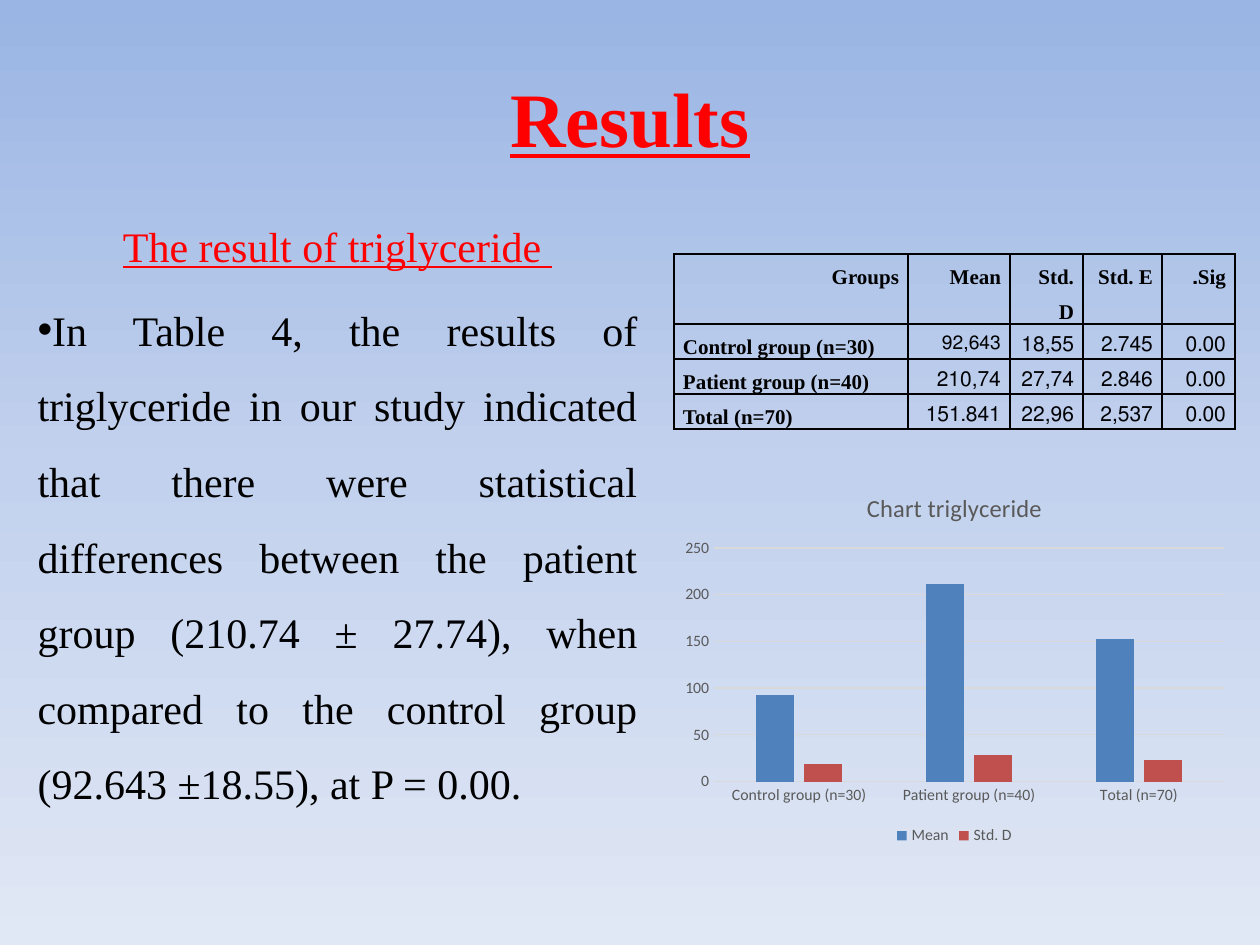
"""Build the triglyceride results slide: text, table and column chart."""
from copy import deepcopy
from dataclasses import dataclass

from lxml.etree import SubElement
from pptx import Presentation
from pptx.chart.data import CategoryChartData
from pptx.dml.color import RGBColor
from pptx.enum.chart import XL_CHART_TYPE, XL_LEGEND_POSITION, XL_TICK_MARK
from pptx.enum.text import MSO_ANCHOR, MSO_AUTO_SIZE, PP_ALIGN
from pptx.oxml import parse_xml
from pptx.oxml.ns import nsdecls, qn
from pptx.util import Emu, Pt

TITLE = "Results"
HEAD = "The result of triglyceride "
BODY = [
    "In Table 4, the results of triglyceride in our study indicated that there "
    "were statistical differences between the patient group (",
    "210.74", " ± ", "27.74",
    "), when compared to the control group (92.643 ±", "18.55",
    "), at P = 0.00.",
]
ROWS = [
    ("Groups", "Mean", "Std. D", "Std. E", "Sig."),
    ("Control group (n=30)", "92,643", "18,55", "2.745", "0.00"),
    ("Patient group (n=40)", "210,74", "27,74", "2.846", "0.00"),
    ("Total (n=70)", "151.841", "22,96", "2,537", "0.00"),
]
COLS = (234, 102, 73, 79, 73)
HIGHS = (70, 35, 35, 35)
CHART = "Chart triglyceride"
SERIES = {"Mean": (93, 211, 152), "Std. D": (19, 28, 23)}
BOX = {
    "title": (63, 38, 1134, 157),
    "body": (25, 214, 625, 665),
    "table": (674, 254, 561, 175),
    "chart": (674, 472, 561, 378),
}


@dataclass(frozen=True)
class Theme:
    serif: str = "Times New Roman"
    sans: str = "Calibri"
    red: str = "FF0000"
    black: str = "000000"
    ink: str = "010205"
    gray: str = "595959"
    rule: str = "D9D9D9"
    bars: tuple = ("4F81BD", "C0504D")
    sky: tuple = ((0, "9AB5E4"), (0.5, "C2D1ED"), (1, "E1E8F5"))
    title: int = 44
    body: int = 24
    cell: int = 12
    small: int = 11
    chart: int = 14
    label: int = 9


LOOK = Theme()


def px(num):
    return Emu(num * 914400 // 126)


def place(shape, name):
    shape.left, shape.top, shape.width, shape.height = map(px, BOX[name])


def style(font, size, color, face):
    font.size, font.name = Pt(size), face
    font.color.rgb = RGBColor.from_string(color)


def write(para, text, size, color=LOOK.black, face=LOOK.serif, bold=False,
          under=False, align=None, rtl=False):
    run = para.add_run()
    run.text = text
    style(run.font, size, color, face)
    run.font.bold, run.font.underline = bold, under
    if align is not None:
        para.alignment = align
    if rtl:
        para._p.get_or_add_pPr().set("rtl", "1")


def paint(slide):
    fill = slide.background.fill
    fill.gradient()
    fill.gradient_angle = 270
    stops = slide._element.find(".//" + qn("a:gsLst"))
    stops.append(deepcopy(stops[0]))
    for stop, (pos, color) in zip(fill.gradient_stops, LOOK.sky):
        stop.color.rgb = RGBColor.from_string(color)
        stop.position = pos


def add_text(slide):
    title, body = slide.shapes.title, slide.placeholders[1]
    place(title, "title")
    title.text_frame.vertical_anchor = MSO_ANCHOR.MIDDLE
    write(title.text_frame.paragraphs[0], TITLE, LOOK.title, color=LOOK.red,
          bold=True, under=True, align=PP_ALIGN.CENTER, rtl=True)
    place(body, "body")
    frame = body.text_frame
    frame.auto_size = MSO_AUTO_SIZE.NONE
    head, para = frame.paragraphs[0], frame.add_paragraph()
    write(head, HEAD, LOOK.body, color=LOOK.red, under=True,
          align=PP_ALIGN.CENTER)
    for step, part in enumerate(BODY):
        write(para, part, LOOK.body, align=PP_ALIGN.JUSTIFY,
              color=LOOK.ink if step % 2 else LOOK.black)
    para.line_spacing, para.space_after = 1.5, Pt(10)
    for item, dent, mark in ((head, 0, None), (para, -342900, "•")):
        props = item._p.get_or_add_pPr()
        props.set("marL", "0")
        props.set("indent", str(dent))
        if mark:
            SubElement(props, qn("a:buChar")).set("char", mark)
        else:
            SubElement(props, qn("a:buNone"))


def edge(cell):
    props = cell._tc.get_or_add_tcPr()
    for spot, side in enumerate("LRTB"):
        props.insert(spot, parse_xml(
            f'<a:ln{side} {nsdecls("a")} w="12700"><a:solidFill>'
            f'<a:srgbClr val="{LOOK.black}"/></a:solidFill></a:ln{side}>'))


def add_grid(slide):
    table = slide.shapes.add_table(
        len(ROWS), len(COLS), *map(px, BOX["table"])).table
    table.first_row = table.horz_banding = False
    for col, wide in zip(table.columns, COLS):
        col.width = px(wide)
    for row, high in zip(table.rows, HIGHS):
        row.height = px(high)
    for y, row in enumerate(ROWS):
        for x, text in enumerate(row):
            cell = table.cell(y, x)
            cell.fill.background()
            edge(cell)
            cell.margin_left = cell.margin_right = px(9)
            cell.margin_top = cell.margin_bottom = 0
            para = cell.text_frame.paragraphs[0]
            para.line_spacing, para.space_after = 1.5, Pt(10)
            first = (y, x) == (1, 1)
            plain = y == 0 or x in (0, 4) or first
            write(para, text, LOOK.small if first else LOOK.cell,
                  color=LOOK.black if plain else LOOK.ink,
                  face=LOOK.sans if first else LOOK.serif,
                  bold=y == 0 or x == 0, rtl=True,
                  align=PP_ALIGN.LEFT if y and x == 0 else PP_ALIGN.JUSTIFY)


def add_bars(slide):
    data = CategoryChartData()
    data.categories = [row[0] for row in ROWS[1:]]
    for name, vals in SERIES.items():
        data.add_series(name, vals)
    chart = slide.shapes.add_chart(
        XL_CHART_TYPE.COLUMN_CLUSTERED, *map(px, BOX["chart"]), data).chart
    style(chart.font, LOOK.label, LOOK.gray, LOOK.sans)
    chart.has_title = True
    write(chart.chart_title.text_frame.paragraphs[0], CHART, LOOK.chart,
          color=LOOK.gray, face=LOOK.sans)
    chart.chart_title.include_in_layout = False
    chart.has_legend = True
    chart.legend.position = XL_LEGEND_POSITION.BOTTOM
    chart.legend.include_in_layout = False
    plot = chart.plots[0]
    plot.gap_width, plot.overlap, plot.vary_by_categories = 219, -27, False
    for bar, color in zip(plot.series, LOOK.bars):
        bar.format.fill.solid()
        bar.format.fill.fore_color.rgb = RGBColor.from_string(color)
    cat, val = chart.category_axis, chart.value_axis
    for axis in (cat, val):
        axis.major_tick_mark = axis.minor_tick_mark = XL_TICK_MARK.NONE
        style(axis.tick_labels.font, LOOK.label, LOOK.gray, LOOK.sans)
    val.format.line.fill.background()
    for line in (cat.format.line, val.major_gridlines.format.line):
        line.color.rgb = RGBColor.from_string(LOOK.rule)
        line.width = Pt(0.75)


def main():
    deck = Presentation()
    deck.slide_width, deck.slide_height = px(1260), px(945)
    slide = deck.slides.add_slide(deck.slide_layouts[1])
    paint(slide)
    add_text(slide)
    add_grid(slide)
    add_bars(slide)
    deck.save("out.pptx")


if __name__ == "__main__":
    main()
